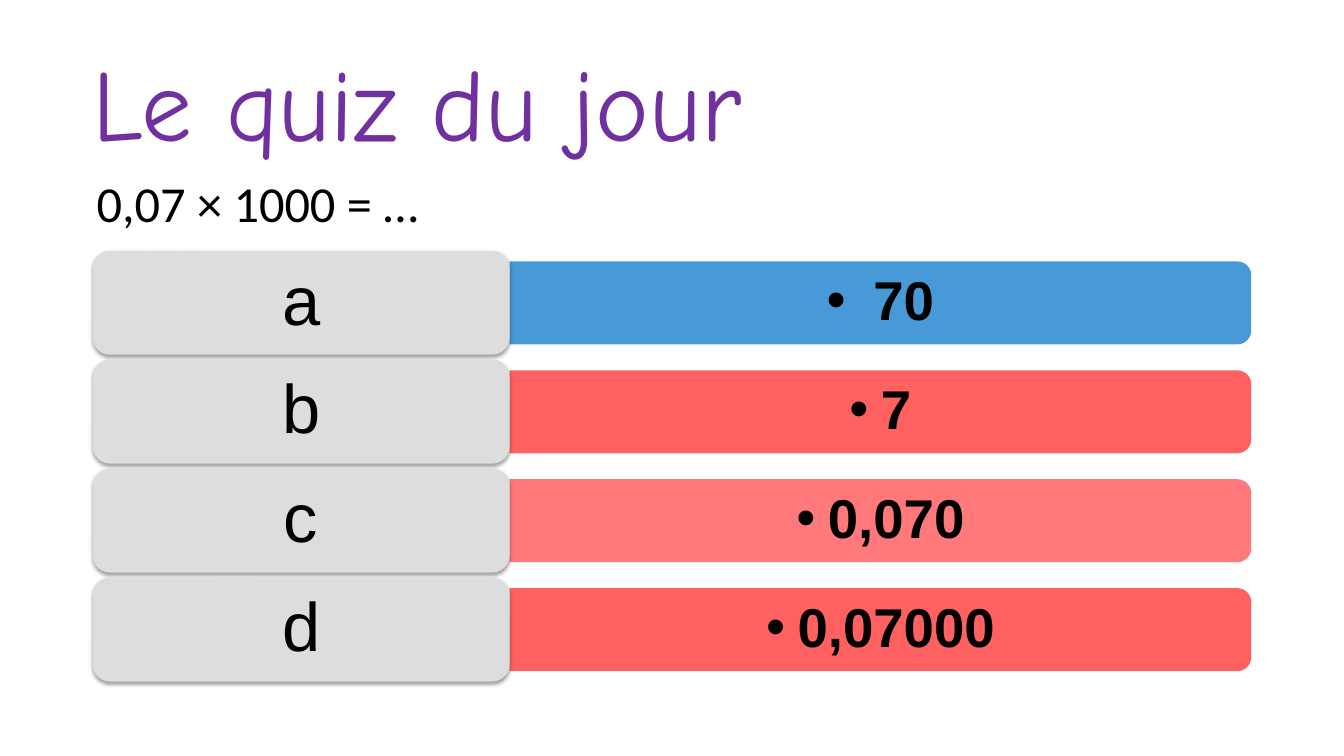
from dataclasses import dataclass

from lxml.etree import SubElement
from pptx import Presentation
from pptx.dml.color import RGBColor as RGB
from pptx.enum.shapes import MSO_SHAPE as SHAPE
from pptx.enum.text import MSO_ANCHOR as ANCHOR, MSO_AUTO_SIZE as FIT, PP_ALIGN as ALIGN
from pptx.oxml.ns import qn
from pptx.util import Pt

TITLE = "Le quiz du jour"
QUESTION = "0,07 × 1000 = …"
ANSWERS = [  # letter, answer, bar colour
    ("a", " 70", "338ED4"),
    ("b", "7", "FF5050"),
    ("c", "0,070", "FF6A6C"),
    ("d", "0,07000", "FF5050"),
]


@dataclass(frozen=True)
class Theme:
    title_font: str = "Comic Neue"
    question_font: str = "Calibri"
    answer_font: str = "Arial"
    title_size: float = 72.6
    question_size: float = 36
    letter_size: float = 49
    answer_size: float = 39
    title_color: str = "7030A0"
    text_color: str = "000000"
    card_color: str = "DDDDDD"
    bar_alpha: int = 90
    shadow_alpha: int = 38


THEME = Theme()

LEFT, TOP = 66.2, 179.3
CARD_W, CARD_H = 298, 74.1
BAR_W, BAR_H = 530, CARD_H * 0.8
PITCH = CARD_H * 1.05
BULLET_INDENT = 22.5


def box(x, y, w, h):
    return Pt(x), Pt(y), Pt(w), Pt(h)


def write(sp, text, font, size, color, bold=False, align=ALIGN.LEFT, insets=(7.2, 3.6), spacing=None):
    tf = sp.text_frame
    tf.vertical_anchor = ANCHOR.MIDDLE
    tf.margin_left = tf.margin_right = Pt(insets[0])
    tf.margin_top = tf.margin_bottom = Pt(insets[1])
    p = tf.paragraphs[0]
    p.alignment = align
    p.line_spacing = spacing
    r = p.add_run()
    r.text = text
    r.font.name, r.font.size, r.font.bold = font, Pt(size), bold
    r.font.color.rgb = RGB.from_string(color)
    return p


def fill(sp, color):
    sp.shadow.inherit = False
    sp.fill.solid()
    sp.fill.fore_color.rgb = RGB.from_string(color)
    sp.line.fill.background()


def set_alpha(color_element, percent):
    SubElement(color_element, qn("a:alpha"), val=str(percent * 1000))


def add_bullet(p):
    pPr = p._p.get_or_add_pPr()
    pPr.set("marL", str(Pt(BULLET_INDENT)))
    pPr.set("indent", str(-Pt(BULLET_INDENT)))
    SubElement(pPr, qn("a:buFont"), typeface=THEME.answer_font)
    SubElement(pPr, qn("a:buChar"), char="•")


def add_shadow(sp):
    effects = sp._element.spPr.find(qn("a:effectLst"))
    shadow = SubElement(effects, qn("a:outerShdw"), blurRad=str(Pt(3.1)), dist=str(Pt(1.6)),
                        dir="5400000", rotWithShape="0")
    set_alpha(SubElement(shadow, qn("a:srgbClr"), val=THEME.text_color), THEME.shadow_alpha)


def add_bar(shapes, x, y, color):
    """Draw a bar rounded on its right: a top-rounded shape turned a quarter."""
    sp = shapes.add_shape(SHAPE.ROUND_2_SAME_RECTANGLE,
                          *box(x + (BAR_W - BAR_H) / 2, y - (BAR_W - BAR_H) / 2, BAR_H, BAR_W))
    sp.rotation = 90
    fill(sp, color)
    set_alpha(sp._element.spPr.find(qn("a:solidFill"))[0], THEME.bar_alpha)


def add_answer(shapes, y, letter, answer, color):
    bar_x, bar_y = LEFT + CARD_W, y + (CARD_H - BAR_H) / 2
    add_bar(shapes, bar_x, bar_y, color)

    sp = shapes.add_textbox(*box(bar_x, bar_y, BAR_W, BAR_H))
    sp.text_frame.word_wrap = True
    p = write(sp, answer, THEME.answer_font, THEME.answer_size, THEME.text_color,
              bold=True, align=ALIGN.CENTER, insets=(11.5, 5.8), spacing=0.9)
    add_bullet(p)

    sp = shapes.add_shape(SHAPE.ROUNDED_RECTANGLE, *box(LEFT, y, CARD_W, CARD_H))
    fill(sp, THEME.card_color)
    add_shadow(sp)
    write(sp, letter, THEME.answer_font, THEME.letter_size, THEME.text_color,
          align=ALIGN.CENTER, spacing=0.9)


def main():
    prs = Presentation()
    prs.slide_width, prs.slide_height = Pt(960.5), Pt(540)
    s = prs.slides.add_slide(prs.slide_layouts[5])

    title = s.shapes.title
    title.left, title.top, title.width, title.height = box(LEFT, 19.4, 828, 129.6)
    title.text_frame.auto_size = FIT.NONE
    write(title, TITLE, THEME.title_font, THEME.title_size, THEME.title_color, insets=(0, 0))
    title.text_frame.margin_bottom = Pt(24)

    for i, (letter, answer, color) in enumerate(ANSWERS):
        add_answer(s.shapes, TOP + i * PITCH, letter, answer, color)

    question = s.shapes.add_textbox(*box(62, 118.8, 259, 51))
    question.text_frame.word_wrap = False
    write(question, QUESTION, THEME.question_font, THEME.question_size, THEME.text_color)

    prs.save("out.pptx")


if __name__ == "__main__":
    main()
